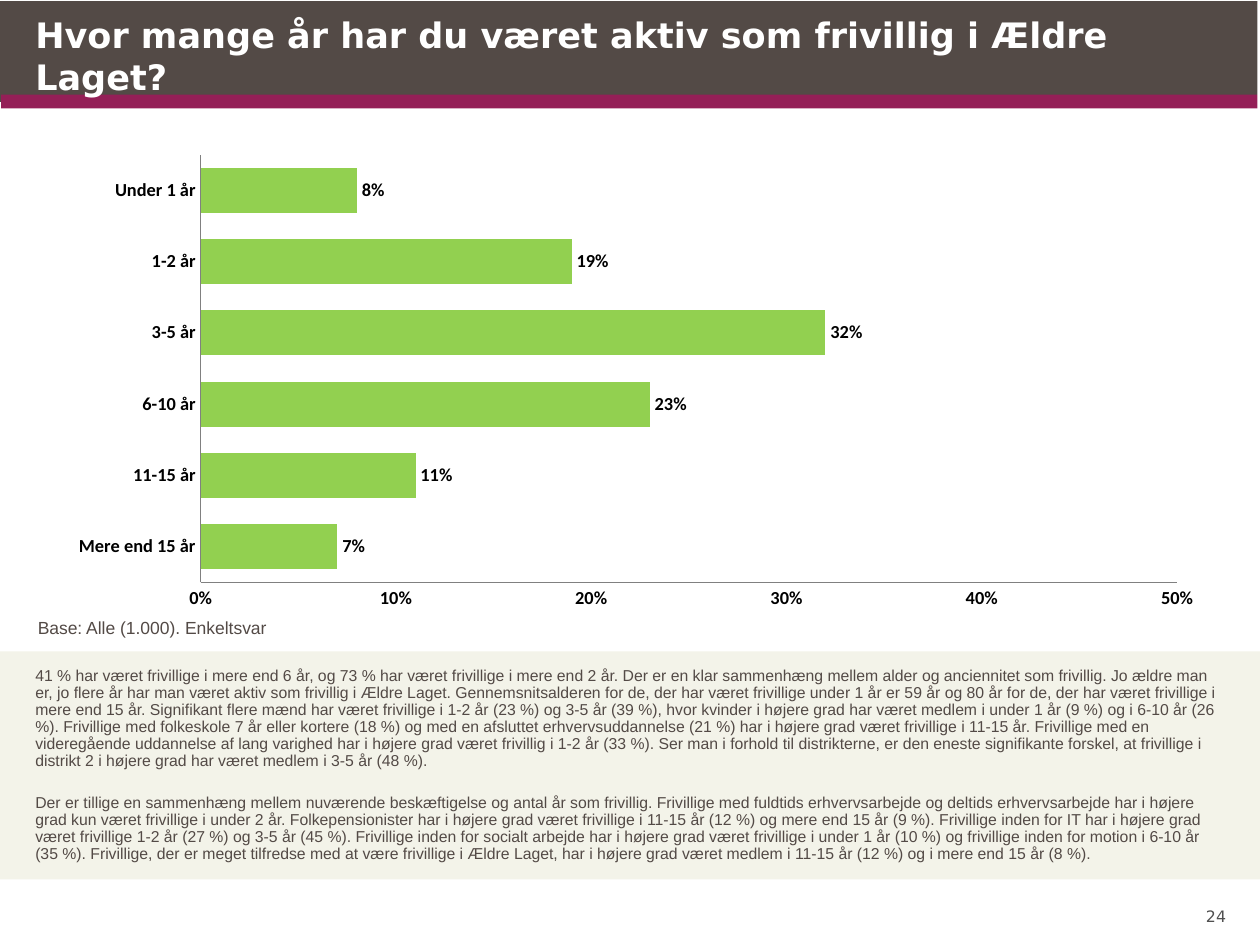
from dataclasses import dataclass

from lxml.etree import SubElement
from pptx import Presentation
from pptx.chart.data import CategoryChartData
from pptx.dml.color import RGBColor
from pptx.enum.chart import XL_CHART_TYPE as ChartType
from pptx.enum.chart import XL_LABEL_POSITION as LabelPosition
from pptx.enum.chart import XL_TICK_MARK as TickMark
from pptx.enum.shapes import MSO_SHAPE as ShapeKind
from pptx.enum.text import MSO_ANCHOR as Anchor
from pptx.enum.text import MSO_AUTO_SIZE as AutoSize
from pptx.enum.text import PP_ALIGN as Align
from pptx.oxml.ns import qn
from pptx.util import Inches, Pt

COLUMNS, ROWS = 100, 75
SLIDE_WIDTH, SLIDE_HEIGHT = Inches(10), Inches(7.5)


@dataclass(frozen=True)
class Theme:
    brown: str = "534A46"
    plum: str = "941F57"
    sand: str = "F3F3E9"
    white: str = "FFFFFF"
    black: str = "000000"
    grey: str = "505050"
    axis: str = "808080"
    green: str = "92D050"
    heading_font: str = "DejaVu Sans"
    body_font: str = "Arial"
    chart_font: str = "Calibri"
    heading_size: float = 20
    chart_size: float = 10.5
    base_size: float = 10
    body_size: float = 9


@dataclass(frozen=True)
class Area:
    column: float
    row: float
    columns: float
    rows: float

    def box(self) -> tuple[int, int, int, int]:
        across, down = SLIDE_WIDTH / COLUMNS, SLIDE_HEIGHT / ROWS
        return (round(self.column * across), round(self.row * down),
                round(self.columns * across), round(self.rows * down))


@dataclass(frozen=True)
class Band:
    area: Area
    color: str


@dataclass(frozen=True)
class Style:
    font: str
    size: float
    color: str
    bold: bool = False
    align: Align = Align.LEFT
    anchor: Anchor = Anchor.TOP
    line_spacing: float = 1.0
    gap: float = 0


@dataclass(frozen=True)
class Block:
    area: Area
    paragraphs: tuple[tuple[str, ...], ...]
    style: Style


THEME = Theme()
TITLE = Block(Area(2.8, 1.1, 94.5, 7.1),
              (("Hvor mange år har du været aktiv som frivillig i Ældre Laget?",),),
              Style(THEME.heading_font, THEME.heading_size, THEME.white, bold=True))
CHART_AREA = Area(2.7, 11.5, 94.5, 38.6)
PLOT_LAYOUT = {"x": 0.14, "y": 0.02, "w": 0.82, "h": 0.88}
YEARS = {"Mere end 15 år": 0.07, "11-15 år": 0.11, "6-10 år": 0.23,
         "3-5 år": 0.32, "1-2 år": 0.19, "Under 1 år": 0.08}

BANDS = (
    Band(Area(0, 0.1, COLUMNS, 8), THEME.brown),
    Band(Area(0.1, 7.5, 99.8, 1.1), THEME.plum),
    Band(Area(99.8, 0, 0.2, ROWS), THEME.white),
    Band(Area(0, 74.8, COLUMNS, 0.2), THEME.white),
    Band(Area(0, 51.7, COLUMNS, 18.1), THEME.sand),
)

SENIORITY = (
    "41 % har været frivillige i mere end 6 år, og 73 % har været frivillige i mere end 2 år.",
    "Der er en klar sammenhæng mellem alder og anciennitet som frivillig.",
    "Jo ældre man er, jo flere år har man været aktiv som frivillig i Ældre Laget.",
    "Gennemsnitsalderen for de, der har været frivillige under 1 år er 59 år og 80 år for de, "
    "der har været frivillige i mere end 15 år.",
    "Signifikant flere mænd har været frivillige i 1-2 år (23 %) og 3-5 år (39 %), hvor kvinder "
    "i højere grad har været medlem i under 1 år (9 %) og i 6-10 år (26 %).",
    "Frivillige med folkeskole 7 år eller kortere (18 %) og med en afsluttet "
    "erhvervsuddannelse (21 %) har i højere grad været frivillige i 11-15 år.",
    "Frivillige med en videregående uddannelse af lang varighed har i højere grad været "
    "frivillig i 1-2 år (33 %).",
    "Ser man i forhold til distrikterne, er den eneste signifikante forskel, at frivillige i "
    "distrikt 2 i højere grad har været medlem i 3-5 år (48 %).",
)
EMPLOYMENT = (
    "Der er tillige en sammenhæng mellem nuværende beskæftigelse og antal år som frivillig.",
    "Frivillige med fuldtids erhvervsarbejde og deltids erhvervsarbejde har i højere grad kun "
    "været frivillige i under 2 år.",
    "Folkepensionister har i højere grad været frivillige i 11-15 år (12 %) og mere end 15 år "
    "(9 %).",
    "Frivillige inden for IT har i højere grad været frivillige 1-2 år (27 %) og 3-5 år (45 %).",
    "Frivillige inden for socialt arbejde har i højere grad været frivillige i under 1 år "
    "(10 %) og frivillige inden for motion i 6-10 år (35 %).",
    "Frivillige, der er meget tilfredse med at være frivillige i Ældre Laget, har i højere grad "
    "været medlem i 11-15 år (12 %) og i mere end 15 år (8 %).",
)

BLOCKS = (
    Block(Area(93.4, 69.4, 3.9, 4.1), (("24",),),
          Style(THEME.heading_font, THEME.body_size, THEME.grey,
                align=Align.RIGHT, anchor=Anchor.BOTTOM)),
    Block(Area(2.8, 51.7, 94.5, 18.1), (SENIORITY, EMPLOYMENT),
          Style(THEME.body_font, THEME.body_size, THEME.brown,
                anchor=Anchor.MIDDLE, line_spacing=0.9, gap=14)),
    Block(Area(3, 49, 28.7, 1.7), (("Base: Alle (1.000). Enkeltsvar",),),
          Style(THEME.body_font, THEME.base_size, THEME.brown)),
)


def format_font(font, name: str, size: float, color: str, bold: bool) -> None:
    font.name, font.size, font.bold = name, Pt(size), bold
    font.color.rgb = RGBColor.from_string(color)


def write(shape, block: Block) -> None:
    style, frame = block.style, shape.text_frame
    shape.left, shape.top, shape.width, shape.height = block.area.box()
    frame.text = "\n".join(" ".join(sentences) for sentences in block.paragraphs)
    frame.word_wrap, frame.auto_size = True, AutoSize.NONE
    frame.vertical_anchor = style.anchor
    frame.margin_left = frame.margin_right = frame.margin_top = frame.margin_bottom = 0
    for index, paragraph in enumerate(frame.paragraphs):
        paragraph.alignment = style.align
        paragraph.line_spacing = style.line_spacing
        paragraph.space_before = Pt(style.gap if index else 0)
        for run in paragraph.runs:
            format_font(run.font, style.font, style.size, style.color, style.bold)


def draw_band(slide, band: Band) -> None:
    shape = slide.shapes.add_shape(ShapeKind.RECTANGLE, *band.area.box())
    shape.shadow.inherit = False
    shape.fill.solid()
    shape.fill.fore_color.rgb = RGBColor.from_string(band.color)
    shape.line.fill.background()


def set_plot_layout(chart) -> None:
    plot_area = chart._chartSpace.chart.plotArea
    layout = plot_area.find(qn("c:layout"))
    if layout is None:
        layout = SubElement(plot_area, qn("c:layout"))
        plot_area.insert(0, layout)
    manual = SubElement(layout, qn("c:manualLayout"))
    settings = {"layoutTarget": "inner", "xMode": "edge", "yMode": "edge", **PLOT_LAYOUT}
    for name, value in settings.items():
        SubElement(manual, qn(f"c:{name}")).set("val", str(value))


def draw_chart(slide) -> None:
    data = CategoryChartData(number_format="0%")
    data.categories = list(YEARS)
    data.add_series("Series 1", list(YEARS.values()))
    chart = slide.shapes.add_chart(ChartType.BAR_CLUSTERED, *CHART_AREA.box(), data).chart
    chart.has_legend = chart.has_title = False
    text = (THEME.chart_font, THEME.chart_size, THEME.black, True)
    format_font(chart.font, *text)
    set_plot_layout(chart)
    for axis in (chart.category_axis, chart.value_axis):
        axis.has_major_gridlines = False
        axis.major_tick_mark = axis.minor_tick_mark = TickMark.NONE
        axis.format.line.color.rgb = RGBColor.from_string(THEME.axis)
        format_font(axis.tick_labels.font, *text)
    scale = chart.value_axis
    scale.minimum_scale, scale.maximum_scale, scale.major_unit = 0, 0.5, 0.1
    scale.tick_labels.number_format = "0%"
    scale.tick_labels.number_format_is_linked = False
    plot = chart.plots[0]
    plot.gap_width, plot.overlap, plot.vary_by_categories = 59, -45, False
    fill = plot.series[0].format.fill
    fill.solid()
    fill.fore_color.rgb = RGBColor.from_string(THEME.green)
    plot.has_data_labels = True
    labels = plot.data_labels
    labels.show_value, labels.position = True, LabelPosition.OUTSIDE_END
    labels.number_format, labels.number_format_is_linked = "0%", False
    format_font(labels.font, *text)


def main() -> None:
    presentation = Presentation()
    presentation.slide_width, presentation.slide_height = SLIDE_WIDTH, SLIDE_HEIGHT
    slide = presentation.slides.add_slide(presentation.slide_layouts[5])
    for band in BANDS:
        draw_band(slide, band)
    title = slide.shapes.title
    slide.shapes._spTree.append(title._element)
    write(title, TITLE)
    draw_chart(slide)
    for block in BLOCKS:
        write(slide.shapes.add_textbox(*block.area.box()), block)
    presentation.save("out.pptx")


if __name__ == "__main__":
    main()
